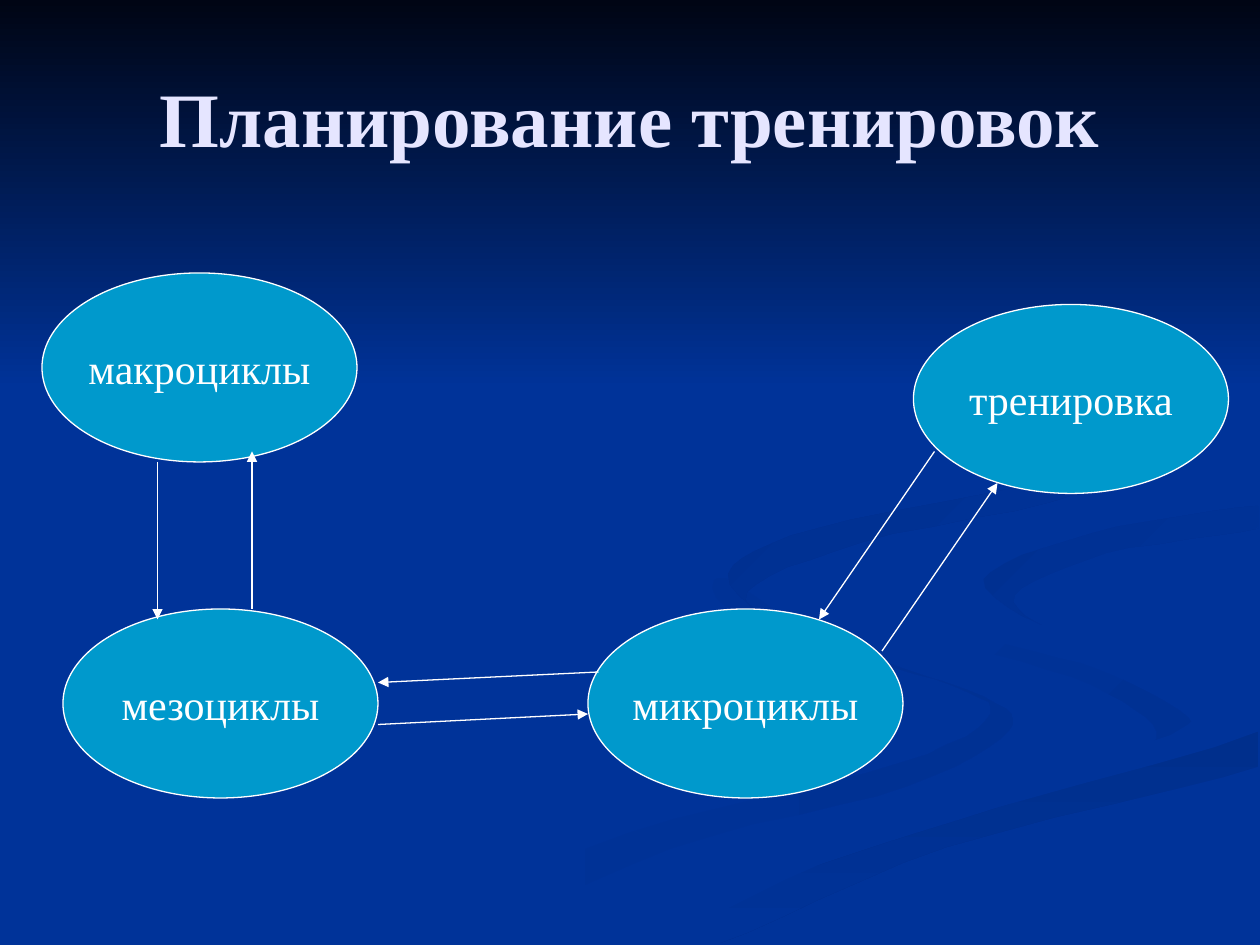
import pptx
import pptx.util
import pptx.dml.color
import pptx.enum.shapes
import pptx.enum.text
import pptx.oxml.ns
import lxml.etree

Pt = pptx.util.Pt
WIDE, HIGH = 720, 540
FONT = "Times New Roman"
HUES = {"back": "003399", "night": "000514", "oval": "0099CC", "line": "FFFFFF",
        "title": "E5E5FF", "dim": "003193", "deep": "002F8C", "mid": "003091", "dusk": "002F8E"}

# Background ribbons, back to front: first colour, last colour, angle, key points
RIBBONS = [
    ("back", "dim", 0, [
        (562, 398), (476, 369), (414, 330), (422, 351), (534, 388), (566, 408), (514, 436),
        (359, 476), (216, 539), (260, 539), (383, 485), (519, 449), (576, 418)]),
    ("back", "dim", 45, [
        (679, 410), (626, 382), (557, 362), (521, 334), (544, 364), (625, 392), (661, 418),
        (644, 436), (671, 424)]),
    ("deep", "back", 90, [
        (362, 539), (411, 539), (541, 484), (719, 438), (719, 418), (598, 453), (454, 499)]),
    ("back", "back", 0, [
        (522, 334), (557, 362), (652, 389), (679, 414), (562, 456), (343, 539), (374, 538),
        (501, 482), (719, 418), (719, 387), (599, 359), (562, 333), (612, 307), (719, 289),
        (719, 279), (567, 304)]),
    ("mid", "back", 45, [
        (562, 331), (595, 357), (580, 340), (632, 316), (719, 302), (719, 289), (623, 305)]),
    ("dusk", "back", 45, [
        (492, 310), (616, 282), (644, 248), (607, 198), (549, 168), (616, 205), (640, 241),
        (606, 272), (467, 302), (416, 328), (448, 360), (427, 338)]),
]
OVALS = [("макроциклы", 24, 156), ("мезоциклы", 36, 348),
         ("микроциклы", 336, 348), ("тренировка", 522, 174)]
ARROWS = [(90, 264, 90, 354), (216, 414, 336, 408), (504, 372, 570, 276),
          (534, 258, 468, 354), (342, 384, 216, 390), (144, 348, 144, 258)]


def rgb(name):
    return pptx.dml.color.RGBColor.from_string(HUES[name])


def smooth(spots, steps=6):
    """Closed Catmull-Rom curve through the spots, kept inside the slide."""
    curve = []
    for i in range(len(spots)):
        quad = [spots[(i + k) % len(spots)] for k in (-1, 0, 1, 2)]
        for step in range(steps):
            t = step / steps
            x, y = (b + t * (c - a + t * (2 * a - 5 * b + 4 * c - d
                                          + t * (3 * b - a - 3 * c + d))) / 2
                    for a, b, c, d in zip(*quad))
            curve.append((min(x, WIDE - 1), min(y, HIGH - 1)))
    return curve


def write(frame, text, size=24, hue="line", bold=False, wrap=False):
    frame.word_wrap = wrap
    frame.vertical_anchor = pptx.enum.text.MSO_ANCHOR.MIDDLE
    para = frame.paragraphs[0]
    para.alignment = pptx.enum.text.PP_ALIGN.CENTER
    run = para.add_run()
    run.text = text
    run.font.name = FONT
    run.font.size = Pt(size)
    run.font.bold = bold
    run.font.color.rgb = rgb(hue)


class Deck:
    """Holds the line style and the current slide."""

    def __init__(self, slide, width=0.75):
        self.shapes = slide.shapes
        self.width = Pt(width)
        slide.background.fill.solid()
        slide.background.fill.fore_color.rgb = rgb("back")

    def stroke(self, line):
        line.color.rgb = rgb("line")
        line.width = self.width

    def shade(self, shape, first, last, angle):
        """Fill a borderless shape, plain if both colours agree."""
        shape.shadow.inherit = False
        shape.line.fill.background()
        if first == last:
            shape.fill.solid()
            shape.fill.fore_color.rgb = rgb(first)
            return
        shape.fill.gradient()
        shape.fill.gradient_angle = -angle % 360
        for stop, hue in zip(shape.fill.gradient_stops, (first, last)):
            stop.color.rgb = rgb(hue)

    def ribbon(self, first, last, angle, spots):
        curve = smooth(spots)
        pen = self.shapes.build_freeform(*curve[0], scale=Pt(1))
        pen.add_line_segments(curve[1:], close=True)
        self.shade(pen.convert_to_shape(), first, last, angle)

    def band(self, first, last, high):
        kind = pptx.enum.shapes.MSO_SHAPE.RECTANGLE
        shape = self.shapes.add_shape(kind, 0, 0, Pt(WIDE), Pt(high))
        self.shade(shape, first, last, 90)

    def title(self, text, x, y, w, h):
        """Fill the title and bring it in front of the ribbons."""
        shape = self.shapes.title
        shape.left, shape.top, shape.width, shape.height = map(Pt, (x, y, w, h))
        write(shape.text_frame, text, size=44, hue="title", bold=True, wrap=True)
        shape.element.getparent().append(shape.element)

    def oval(self, text, x, y, w=180, h=108):
        kind = pptx.enum.shapes.MSO_SHAPE.OVAL
        shape = self.shapes.add_shape(kind, *map(Pt, (x, y, w, h)))
        shape.shadow.inherit = False
        shape.fill.solid()
        shape.fill.fore_color.rgb = rgb("oval")
        self.stroke(shape.line)
        write(shape.text_frame, text)

    def arrow(self, *ends):
        kind = pptx.enum.shapes.MSO_CONNECTOR.STRAIGHT
        link = self.shapes.add_connector(kind, *map(Pt, ends))
        self.stroke(link.line)
        qn = pptx.oxml.ns.qn
        props = link.element.find(qn("p:spPr"))
        lxml.etree.SubElement(props.find(qn("a:ln")), qn("a:tailEnd"), type="triangle")
        lxml.etree.SubElement(props, qn("a:effectLst"))


def main():
    prs = pptx.Presentation()
    prs.slide_width, prs.slide_height = Pt(WIDE), Pt(HIGH)
    deck = Deck(prs.slides.add_slide(prs.slide_layouts[5]))
    for item in RIBBONS:
        deck.ribbon(*item)
    deck.band("night", "back", 222)
    deck.title("Планирование тренировок", 36, 21.6, 648, 90)
    for item in OVALS:
        deck.oval(*item)
    for item in ARROWS:
        deck.arrow(*item)
    prs.save("out.pptx")


if __name__ == "__main__":
    main()
